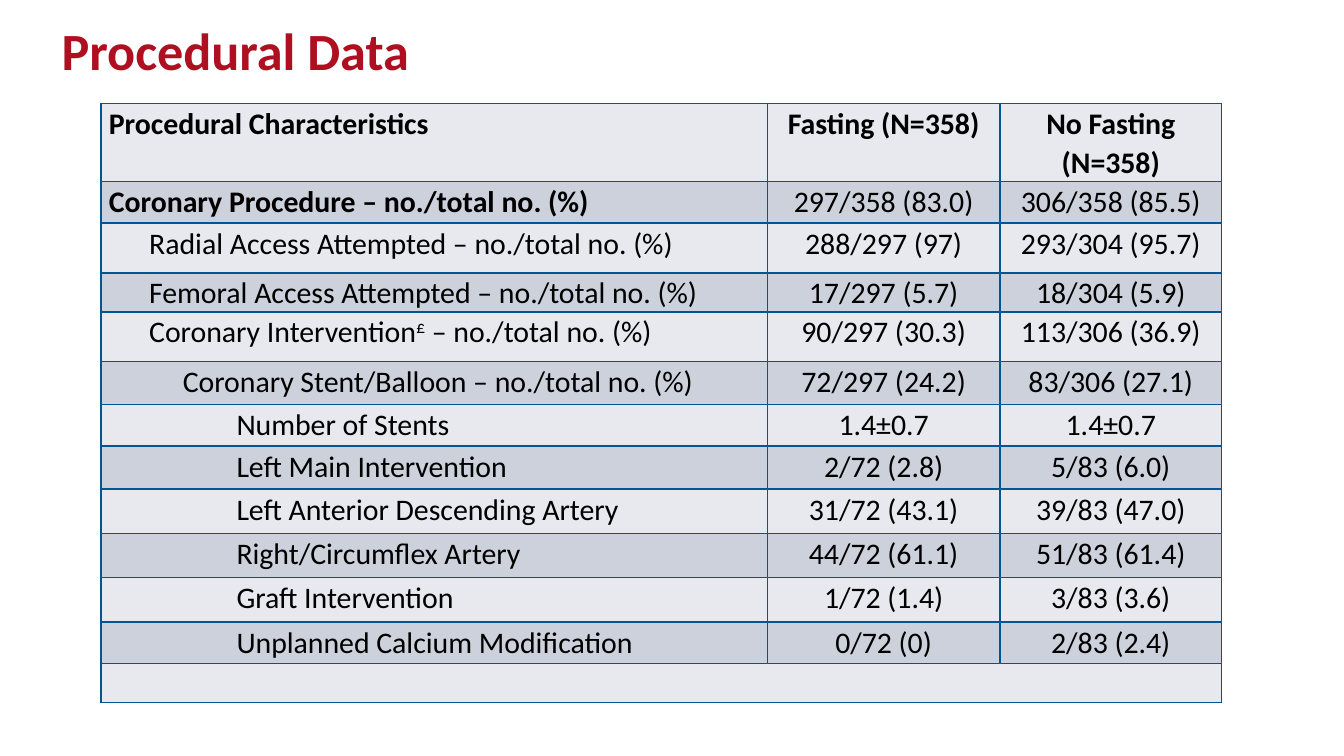
from lxml.etree import SubElement
from pptx import Presentation
from pptx.dml.color import RGBColor
from pptx.enum.text import MSO_ANCHOR, PP_ALIGN
from pptx.oxml.ns import qn
from pptx.util import Inches, Pt

RED = RGBColor(0xAE, 0x10, 0x22)
BLUE = RGBColor(0x00, 0x56, 0x94)
BLACK = RGBColor(0, 0, 0)
LIGHT = RGBColor(0xE7, 0xE9, 0xEE)
DARK = RGBColor(0xCC, 0xD1, 0xDC)

WIDTH = 10
HEIGHT = WIDTH * 9 / 16
INDENTS = [0, 0.3, 0.55, 0.95]
COLUMN_WIDTHS = [4.96, 1.73, 1.65]
ROWS = [
    (0.58, 0, "Procedural Characteristics", "Fasting (N=358)", "No Fasting (N=358)"),
    (0.31, 0, "Coronary Procedure – no./total no. (%)", "297/358 (83.0)", "306/358 (85.5)"),
    (0.37, 1, "Radial Access Attempted – no./total no. (%)", "288/297 (97)", "293/304 (95.7)"),
    (0.29, 1, "Femoral Access Attempted – no./total no. (%)", "17/297 (5.7)", "18/304 (5.9)"),
    (0.37, 1, "Coronary Intervention£ – no./total no. (%)", "90/297 (30.3)", "113/306 (36.9)"),
    (0.32, 2, "Coronary Stent/Balloon – no./total no. (%)", "72/297 (24.2)", "83/306 (27.1)"),
    (0.31, 3, "Number of Stents", "1.4±0.7", "1.4±0.7"),
    (0.32, 3, "Left Main Intervention", "2/72 (2.8)", "5/83 (6.0)"),
    (0.33, 3, "Left Anterior Descending Artery", "31/72 (43.1)", "39/83 (47.0)"),
    (0.33, 3, "Right/Circumflex Artery", "44/72 (61.1)", "51/83 (61.4)"),
    (0.33, 3, "Graft Intervention", "1/72 (1.4)", "3/83 (3.6)"),
    (0.31, 3, "Unplanned Calcium Modification", "0/72 (0)", "2/83 (2.4)"),
    (0.29, 0, "", "", ""),
]


def add_run(paragraph, text, size, color, bold):
    run = paragraph.add_run()
    run.text = text
    run.font.name = "Calibri"
    run.font.size = Pt(size)
    run.font.bold = bold
    run.font.color.rgb = color
    return run


def style_cell(cell, fill):
    cell.margin_left = cell.margin_right = Inches(0.06)
    cell.margin_top = cell.margin_bottom = 0
    properties = cell._tc.get_or_add_tcPr()
    for side in ("lnL", "lnR", "lnT", "lnB"):
        border = SubElement(properties, qn(f"a:{side}"), w=str(Pt(1)))
        solid = SubElement(border, qn("a:solidFill"))
        SubElement(solid, qn("a:srgbClr"), val=str(BLUE))
    cell.fill.solid()
    cell.fill.fore_color.rgb = fill


presentation = Presentation()
presentation.slide_width = Inches(WIDTH)
presentation.slide_height = Inches(HEIGHT)
slide = presentation.slides.add_slide(presentation.slide_layouts[6])

title = slide.shapes.add_textbox(
    Inches(WIDTH * 0.036), Inches(HEIGHT * 0.037), Inches(WIDTH * 0.835), Inches(HEIGHT * 0.084)
)
title.text_frame.word_wrap = True
title.text_frame.vertical_anchor = MSO_ANCHOR.TOP
title_paragraph = title.text_frame.paragraphs[0]
title_paragraph.line_spacing = Pt(25)
add_run(title_paragraph, "Procedural Data", 28, RED, True)

table = slide.shapes.add_table(
    len(ROWS), len(COLUMN_WIDTHS),
    Inches(WIDTH * 0.075), Inches(HEIGHT * 0.137),
    Inches(sum(COLUMN_WIDTHS)), Inches(sum(row[0] for row in ROWS)),
).table
for column, width in zip(table.columns, COLUMN_WIDTHS):
    column.width = Inches(width)

for row_index, (height, level, *texts) in enumerate(ROWS):
    table.rows[row_index].height = Inches(height)
    for column_index, text in enumerate(texts):
        cell = table.cell(row_index, column_index)
        style_cell(cell, DARK if row_index % 2 else LIGHT)
        paragraph = cell.text_frame.paragraphs[0]
        if not text:
            SubElement(paragraph._p, qn("a:endParaRPr"), sz="1600")
            continue
        paragraph.line_spacing = 1.07
        paragraph.space_after = Pt(8)
        paragraph.alignment = PP_ALIGN.CENTER if column_index else PP_ALIGN.JUSTIFY
        if column_index == 0:
            paragraph._p.get_or_add_pPr().set("marL", str(Inches(INDENTS[level])))
        bold = row_index == 0 or (row_index == 1 and column_index == 0)
        for part in text.replace("£", "|£|").split("|"):
            run = add_run(paragraph, part, 16, BLACK, bold)
            if part == "£":
                run.font._element.set("baseline", "30000")

last_row = len(ROWS) - 1
table.cell(last_row, 0).merge(table.cell(last_row, len(COLUMN_WIDTHS) - 1))

presentation.save("out.pptx")
